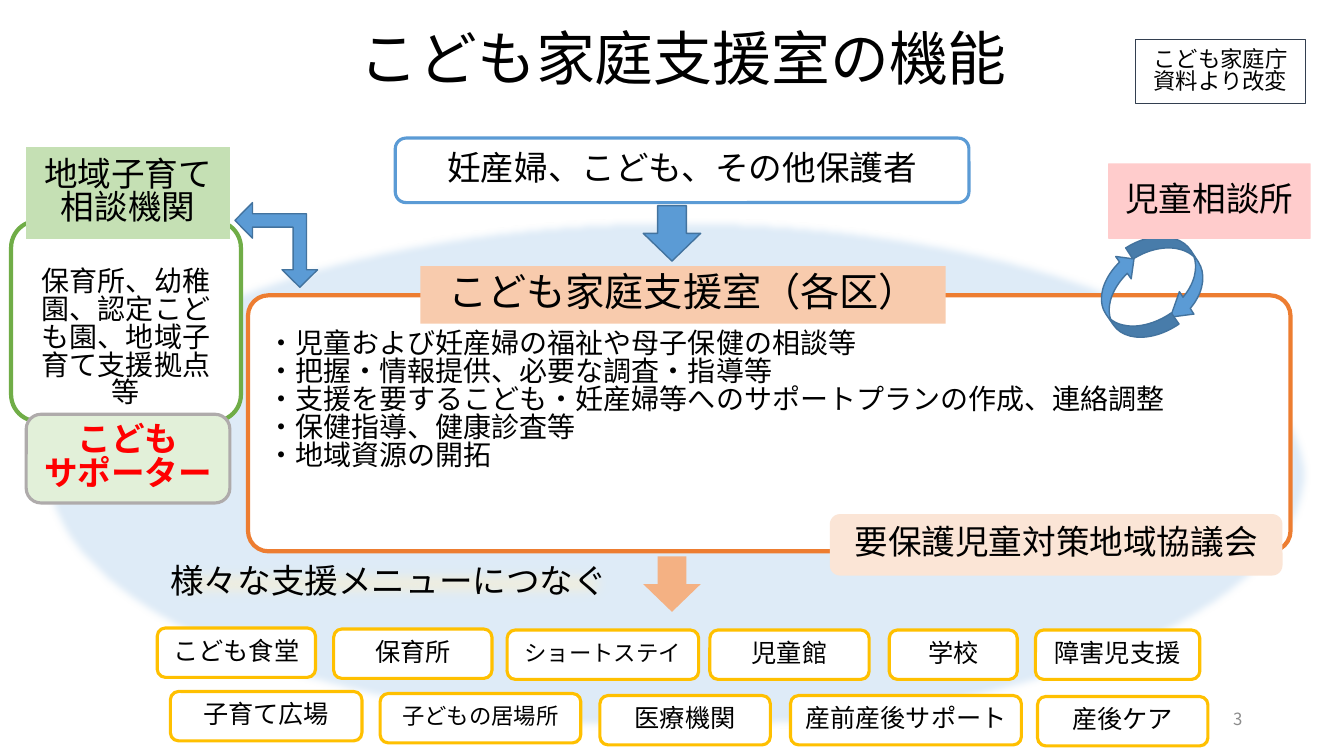
from dataclasses import dataclass
from lxml.etree import SubElement
from pptx import Presentation
from pptx.dml.color import RGBColor
from pptx.enum.shapes import MSO_SHAPE
from pptx.enum.text import MSO_ANCHOR, PP_ALIGN
from pptx.oxml.ns import qn
from pptx.util import Inches, Pt

FONT = "Noto Sans CJK JP"
BLUE, BLUE_EDGE = "5B9BD5", "43739E"
LINE_SPACING = 0.83


@dataclass
class Box:
    at: tuple
    fill: str | None = None
    line: str | None = None
    weight: float = 2.25
    lines: tuple = ()
    size: float = 24
    kind: MSO_SHAPE = MSO_SHAPE.ROUNDED_RECTANGLE
    adjustments: tuple = ()
    rotation: float = 0
    anchor: MSO_ANCHOR = MSO_ANCHOR.MIDDLE
    color: str = "000000"
    bold: bool = False
    align: PP_ALIGN = PP_ALIGN.CENTER
    soft_edge: float = 0


def color_of(value: str) -> RGBColor:
    return RGBColor.from_string(value)


def write_text(shape, lines: tuple, size: float, color: str = "000000", bold: bool = False,
               align: PP_ALIGN = PP_ALIGN.CENTER, anchor: MSO_ANCHOR = MSO_ANCHOR.MIDDLE,
               spacing: float = LINE_SPACING) -> None:
    frame = shape.text_frame
    frame.word_wrap = True
    frame.vertical_anchor = anchor
    frame.text = "\n".join(lines)
    for paragraph in frame.paragraphs:
        paragraph_format = {"alignment": align, "line_spacing": spacing,
                            "space_before": Pt(0), "space_after": Pt(0)}
        for name, value in paragraph_format.items():
            setattr(paragraph, name, value)
        for run in paragraph.runs:
            for name, value in {"name": FONT, "size": Pt(size), "bold": bold}.items():
                setattr(run.font, name, value)
            run.font.color.rgb = color_of(color)
            SubElement(run.font._element, qn("a:ea"), typeface=FONT)


def draw_box(shapes, box: Box) -> None:
    shape = shapes.add_shape(box.kind, *map(Inches, box.at))
    shape.shadow.inherit = False
    shape.rotation = box.rotation
    for index, value in enumerate(box.adjustments):
        shape.adjustments[index] = value
    if box.fill:
        shape.fill.solid()
        shape.fill.fore_color.rgb = color_of(box.fill)
    else:
        shape.fill.background()
    if box.line:
        shape.line.color.rgb = color_of(box.line)
        shape.line.width = Pt(box.weight)
    else:
        shape.line.fill.background()
    if box.soft_edge:
        effects = shape.element.spPr.find(qn("a:effectLst"))
        SubElement(effects, qn("a:softEdge"), rad=str(Pt(box.soft_edge)))
    if box.lines:
        write_text(shape, box.lines, box.size, box.color, box.bold, box.align, box.anchor)


def place(shape, at: tuple) -> None:
    for name, value in zip(("left", "top", "width", "height"), at):
        setattr(shape, name, Inches(value))
    shape.element.getparent().append(shape.element)


RECTANGLE = MSO_SHAPE.RECTANGLE
MAIN_BOXES = [
    Box((0.43, 2.17, 12.57, 5.09), "DEEBF7", kind=MSO_SHAPE.OVAL, soft_edge=5),
    Box((2.46, 2.93, 10.34, 2.54), "FFFFFF", "ED7D31", 3, adjustments=(0.08,)),
    Box((4.17, 2.64, 5.21, 0.57), "F8CBAD", lines=("こども家庭支援室（各区）",), size=28, kind=RECTANGLE),
    Box((0.11, 2.19, 2.28, 1.99), "FFFFFF", "70AD47", 3, ("保育所、幼稚園、認定こども園、地域子育て支援拠点等",), 20,
        adjustments=(0.134,), anchor=MSO_ANCHOR.BOTTOM),
    Box((0.26, 1.46, 2.02, 0.91), "C5E0B4", lines=("地域子育て相談機関",), kind=RECTANGLE),
    Box((3.92, 1.37, 5.69, 0.64), "FFFFFF", BLUE, lines=("妊産婦、こども、その他保護者",)),
    Box((8.23, 5.1, 4.49, 0.61), "FBE5D6", lines=("要保護児童対策地域協議会",)),
    Box((6.38, 2.04, 0.57, 0.55), BLUE, BLUE_EDGE, 1, kind=MSO_SHAPE.DOWN_ARROW),
    Box((0.26, 4.11, 2.02, 0.88), "E2F0D9", "AFABAB", lines=("こども", "サポーター"), color="FF0000", bold=True),
    Box((6.38, 5.52, 0.57, 0.55), "F4B183", kind=MSO_SHAPE.DOWN_ARROW),
    Box((1.59, 5.54, 4.55, 0.5), "FFF2CC", lines=("様々な支援メニューにつなぐ",), kind=RECTANGLE,
        align=PP_ALIGN.LEFT, soft_edge=12.5),
    Box((2.32, 2.02, 0.84, 0.82), BLUE, BLUE_EDGE, 1, kind=MSO_SHAPE.LEFT_UP_ARROW,
        adjustments=(0.162, 0.215, 0.213), rotation=270),
    Box((11.26, 0.39, 1.69, 0.64), None, "333F50", 0.75, ("こども家庭庁資料より改変",), 16, RECTANGLE),
]
CYCLE_ARROWS = [
    Box((11.17, 2.45, 0.95, 0.53), BLUE, BLUE_EDGE, 1, kind=MSO_SHAPE.CURVED_DOWN_ARROW,
        adjustments=(0.25, 0.5, 0.4), rotation=57.1),
    Box((10.75, 2.72, 0.92, 0.54), BLUE, BLUE_EDGE, 1, kind=MSO_SHAPE.CURVED_DOWN_ARROW, rotation=235.3),
]
CHILD_GUIDANCE_CENTER = Box((10.99, 1.62, 2.01, 0.75), "FFCCCC", lines=("児童相談所",), adjustments=(0.013,))
SUPPORT_MENU = [
    ("こども食堂", 1.56, 6.23, 1.57, 18),
    ("保育所", 3.31, 6.24, 1.57, 18),
    ("ショートステイ", 5.03, 6.25, 1.9, 16),
    ("児童館", 7.04, 6.25, 1.58, 18),
    ("学校", 8.82, 6.25, 1.27, 18),
    ("障害児支援", 10.27, 6.25, 1.63, 18),
    ("子育て広場", 1.69, 6.86, 1.9, 18),
    ("子どもの居場所", 3.77, 6.88, 1.99, 16),
    ("医療機関", 5.95, 6.9, 1.69, 18),
    ("産前産後サポート", 7.84, 6.9, 2.29, 18),
    ("産後ケア", 10.29, 6.91, 1.69, 18),
]
DUTIES = (
    "・児童および妊産婦の福祉や母子保健の相談等",
    "・把握・情報提供、必要な調査・指導等",
    "・支援を要するこども・妊産婦等へのサポートプランの作成、連絡調整",
    "・保健指導、健康診査等",
    "・地域資源の開拓",
)


def main() -> None:
    presentation = Presentation()
    presentation.slide_width, presentation.slide_height = Inches(13.33), Inches(7.5)
    slide = presentation.slides.add_slide(presentation.slide_layouts[1])
    title, duties = slide.placeholders

    for box in MAIN_BOXES:
        draw_box(slide.shapes, box)
    cycle = slide.shapes.add_group_shape()
    for arrow in CYCLE_ARROWS:
        draw_box(cycle.shapes, arrow)
    draw_box(slide.shapes, CHILD_GUIDANCE_CENTER)
    for label, left, top, width, size in SUPPORT_MENU:
        draw_box(slide.shapes, Box((left, top, width, 0.49), "FFFFFF", "FFC000", lines=(label,), size=size))

    place(title, (3.24, 0.12, 7.07, 0.83))
    write_text(title, ("こども家庭支援室の機能",), 42, anchor=MSO_ANCHOR.BOTTOM, spacing=0.7)
    place(duties, (2.55, 3.24, 10.12, 1.78))
    write_text(duties, DUTIES, 20, align=PP_ALIGN.LEFT, anchor=MSO_ANCHOR.TOP)
    for paragraph in duties.text_frame.paragraphs:
        properties = paragraph._p.get_or_add_pPr()
        for name in ("marL", "indent"):
            properties.set(name, "0")
        SubElement(properties, qn("a:buNone"))

    page_number = slide.shapes.add_textbox(*map(Inches, (9.42, 6.95, 3, 0.4)))
    write_text(page_number, ("3",), 12, "8C8C8C", align=PP_ALIGN.RIGHT)
    presentation.save("out.pptx")


if __name__ == "__main__":
    main()
